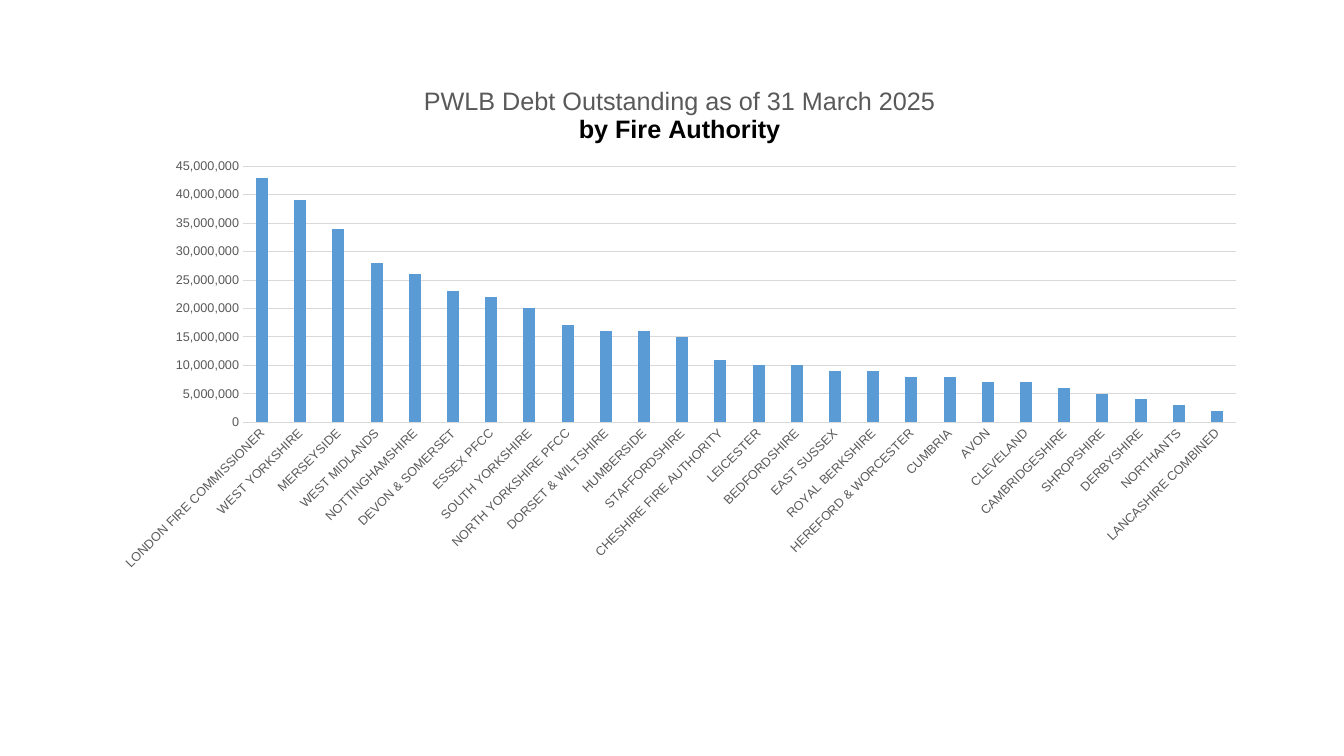
from lxml import etree
from pptx import Presentation
from pptx.chart.data import CategoryChartData
from pptx.dml.color import RGBColor
from pptx.enum import chart as ch
from pptx.oxml import ns
from pptx.util import Inches, Pt

COLORS = {"bar": "5B9BD5", "grid": "D9D9D9", "label": "595959", "black": "000000"}
DEBT_MILLIONS = {
    "LONDON FIRE COMMISSIONER": 43,
    "WEST YORKSHIRE": 39,
    "MERSEYSIDE": 34,
    "WEST MIDLANDS": 28,
    "NOTTINGHAMSHIRE": 26,
    "DEVON & SOMERSET": 23,
    "ESSEX PFCC": 22,
    "SOUTH YORKSHIRE": 20,
    "NORTH YORKSHIRE PFCC": 17,
    "DORSET & WILTSHIRE": 16,
    "HUMBERSIDE": 16,
    "STAFFORDSHIRE": 15,
    "CHESHIRE FIRE AUTHORITY": 11,
    "LEICESTER": 10,
    "BEDFORDSHIRE": 10,
    "EAST SUSSEX": 9,
    "ROYAL BERKSHIRE": 9,
    "HEREFORD & WORCESTER": 8,
    "CUMBRIA": 8,
    "AVON": 7,
    "CLEVELAND": 7,
    "CAMBRIDGESHIRE": 6,
    "SHROPSHIRE": 5,
    "DERBYSHIRE": 4,
    "NORTHANTS": 3,
    "LANCASHIRE COMBINED": 2,
}


def set_font(font, size, color, bold=False):
    font.name = "Arial"
    font.size = Pt(size)
    font.bold = bold
    font.color.rgb = RGBColor.from_string(COLORS[color])


deck = Presentation()
deck.slide_width, deck.slide_height = Inches(13.33), Inches(7.5)
page = deck.slides.add_slide(deck.slide_layouts[6])

data = CategoryChartData(number_format="#,##0")
data.categories = list(DEBT_MILLIONS)
data.add_series("Series 1", [debt * 1_000_000 for debt in DEBT_MILLIONS.values()])
chart = page.shapes.add_chart(
    ch.XL_CHART_TYPE.COLUMN_CLUSTERED,
    Inches(0.99), Inches(0.66), Inches(11.5), Inches(5.11), data,
).chart
chart.has_legend = False
set_font(chart.font, 10, "black")

# Title
title = chart.chart_title.text_frame
title_lines = [
    ("PWLB Debt Outstanding as of 31 March 2025", "label", False),
    ("by Fire Authority", "black", True),
]
for number, (words, color, bold) in enumerate(title_lines):
    para = title.add_paragraph() if number else title.paragraphs[0]
    span = para.add_run()
    span.text = words
    set_font(span.font, 18, color, bold)
chart.chart_title.include_in_layout = False

# Columns
plot = chart.plots[0]
plot.gap_width = 219
plot.overlap = -27
plot.vary_by_categories = False
fill = plot.series[0].format.fill
fill.solid()
fill.fore_color.rgb = RGBColor.from_string(COLORS["bar"])

# Axes
authority_axis, debt_axis = chart.category_axis, chart.value_axis
for axis in (authority_axis, debt_axis):
    axis.major_tick_mark = axis.minor_tick_mark = ch.XL_TICK_MARK.NONE
    set_font(axis.tick_labels.font, 9, "label")
debt_axis.minimum_scale = 0
debt_axis.maximum_scale = 45_000_000
debt_axis.major_unit = 5_000_000
debt_axis.tick_labels.number_format = "#,##0"
debt_axis.tick_labels.number_format_is_linked = False
debt_axis.format.line.fill.background()
debt_axis.has_major_gridlines = True
for line in (authority_axis.format.line, debt_axis.major_gridlines.format.line):
    line.color.rgb = RGBColor.from_string(COLORS["grid"])
    line.width = Pt(0.75)

# Slanted authority names
plot_area = chart.element.find(".//" + ns.qn("c:plotArea"))
label_body = plot_area.find("/".join(ns.qn(tag) for tag in ("c:catAx", "c:txPr", "a:bodyPr")))
label_body.set("rot", "-2700000")
label_body.set("vert", "horz")

# Inner plot area as fractions of the chart frame
layout = plot_area.find(ns.qn("c:layout"))
if layout is None:
    layout = etree.Element(ns.qn("c:layout"))
    plot_area.insert(0, layout)
manual = etree.SubElement(layout, ns.qn("c:manualLayout"))
settings = {
    "layoutTarget": "inner", "xMode": "edge", "yMode": "edge",
    "x": Inches(1.42) / Inches(11.5), "y": Inches(0.99) / Inches(5.11),
    "w": Inches(9.85) / Inches(11.5), "h": Inches(2.54) / Inches(5.11),
}
for name, value in settings.items():
    etree.SubElement(manual, ns.qn("c:" + name)).set("val", str(value))

deck.save("out.pptx")
